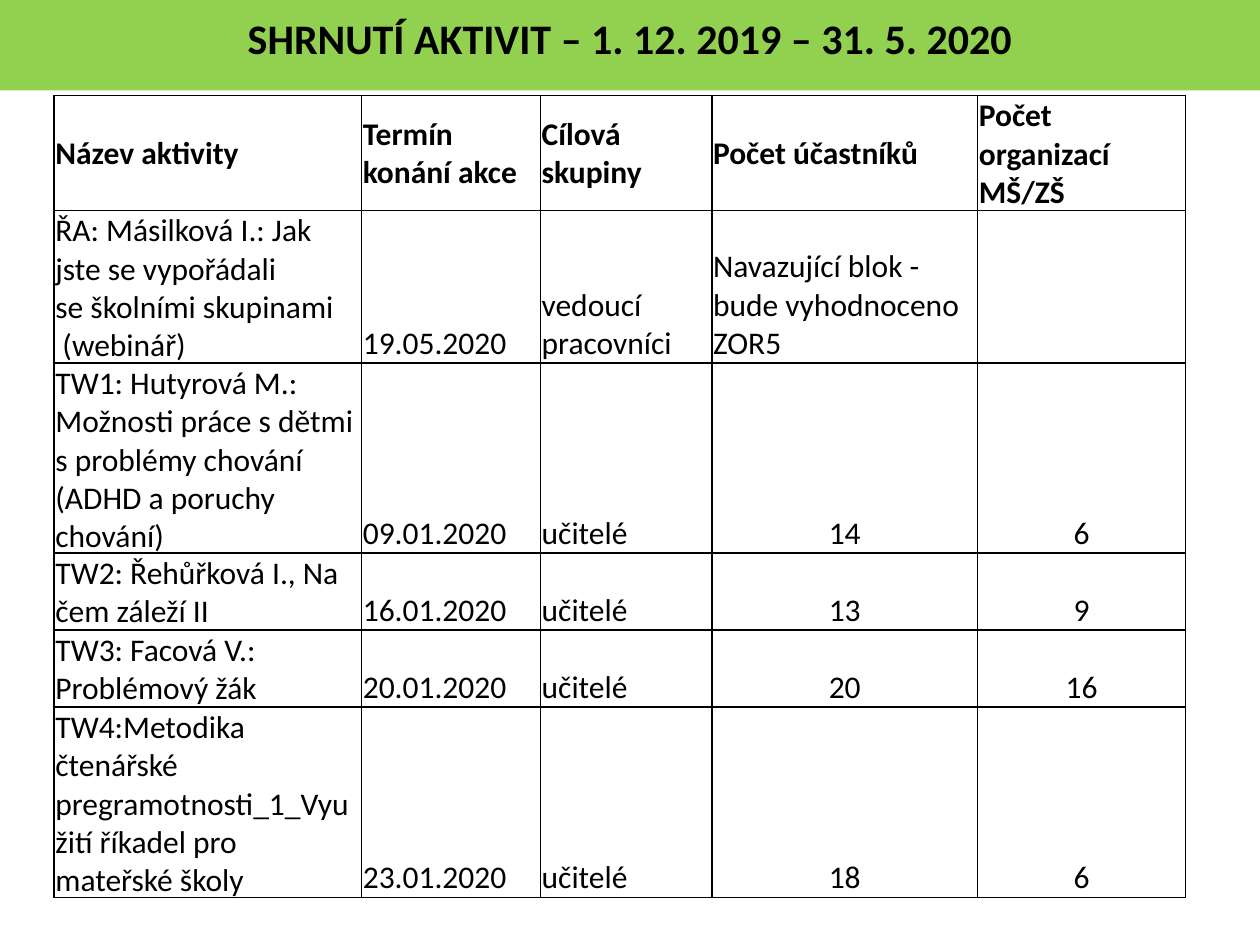
from dataclasses import dataclass

from lxml import etree
from pptx import Presentation
from pptx import util as u
from pptx.dml.color import RGBColor
from pptx.enum import text as t
from pptx.oxml import ns

BLACK = RGBColor(0x00, 0x00, 0x00)
WHITE = RGBColor(0xFF, 0xFF, 0xFF)
GREEN = RGBColor(0x92, 0xD0, 0x50)
FONT = "Calibri"
WIDTH, HEIGHT = u.Inches(10), u.Inches(7.5)
TABLE_LEFT, TABLE_TOP = u.Inches(0.43), u.Inches(0.76)
LINE_HEIGHT = u.Inches(6.34) / 21
COLUMN_SHARES = (0.244, 0.142, 0.136, 0.211, 0.165)
HEADINGS = (
    "Název aktivity",
    "Termín konání akce",
    "Cílová skupiny",
    "Počet účastníků",
    "Počet organizací MŠ/ZŠ",
)


@dataclass(frozen=True)
class Activity:
    name: str
    date: str
    participants: str
    organizations: str
    lines: int
    audience: str = "učitelé"

    def values(self) -> tuple[str, ...]:
        return (self.name, self.date, self.audience, self.participants, self.organizations)


ACTIVITIES = (
    Activity("ŘA: Másilková I.: Jak jste se vypořádali\vse školními skupinami\v (webinář)",
             "19.05.2020", "Navazující blok - bude vyhodnoceno ZOR5", "", 4, "vedoucí pracovníci"),
    Activity("TW1: Hutyrová M.: Možnosti práce s dětmi s problémy chování (ADHD a poruchy chování)",
             "09.01.2020", "14", "6", 5),
    Activity("TW2: Řehůřková I., Na čem záleží II", "16.01.2020", "13", "9", 2),
    Activity("TW3: Facová V.: Problémový žák", "20.01.2020", "20", "16", 2),
    Activity("TW4:Metodika čtenářské pregramotnosti_1_Využití říkadel pro mateřské školy",
             "23.01.2020", "18", "6", 5),
)


def write(frame, content: str, *, size: int = 18, bold: bool = False,
          align=t.PP_ALIGN.LEFT) -> None:
    para = frame.paragraphs[0]
    para.text = content
    para.alignment = align
    for span in para.runs:
        span.font.name = FONT
        span.font.size = u.Pt(size)
        span.font.bold = bold
        span.font.color.rgb = BLACK


def add_borders(cell) -> None:
    properties = cell._tc.get_or_add_tcPr()
    for index, side in enumerate(("lnL", "lnR", "lnT", "lnB")):
        line = etree.Element(ns.qn(f"a:{side}"), w=str(u.Pt(1)))
        fill = etree.SubElement(line, ns.qn("a:solidFill"))
        etree.SubElement(fill, ns.qn("a:srgbClr"), val=str(BLACK))
        properties.insert(index, line)


def draw_cell(cell, content: str, *, heading: bool) -> None:
    cell.margin_left = cell.margin_right = cell.margin_top = u.Inches(0.01)
    cell.margin_bottom = 0
    cell.vertical_anchor = t.MSO_ANCHOR.MIDDLE if heading else t.MSO_ANCHOR.BOTTOM
    cell.fill.solid()
    cell.fill.fore_color.rgb = WHITE
    add_borders(cell)
    align = t.PP_ALIGN.CENTER if content.isdigit() else t.PP_ALIGN.LEFT
    write(cell.text_frame, content, bold=heading, align=align)


def draw_table(page) -> None:
    rows = (HEADINGS, *(activity.values() for activity in ACTIVITIES))
    line_counts = (3, *(activity.lines for activity in ACTIVITIES))
    table = page.shapes.add_table(
        len(rows), len(HEADINGS), TABLE_LEFT, TABLE_TOP,
        int(WIDTH * sum(COLUMN_SHARES)), int(LINE_HEIGHT * sum(line_counts))).table
    table.first_row = table.horz_banding = False
    for column, share in zip(table.columns, COLUMN_SHARES):
        column.width = int(WIDTH * share)
    for index, (values, lines) in enumerate(zip(rows, line_counts)):
        table.rows[index].height = int(LINE_HEIGHT * lines)
        for cell, content in zip(table.rows[index].cells, values):
            draw_cell(cell, content, heading=index == 0)


def draw_title(page) -> None:
    box = page.shapes.title
    box.left, box.top = 0, u.Inches(0.05)
    box.width, box.height = WIDTH, u.Inches(0.5)
    box.fill.solid()
    box.fill.fore_color.rgb = GREEN
    box.text_frame.word_wrap = True
    box.text_frame.auto_size = t.MSO_AUTO_SIZE.SHAPE_TO_FIT_TEXT
    box.text_frame.vertical_anchor = t.MSO_ANCHOR.MIDDLE
    write(box.text_frame, "SHRNUTÍ AKTIVIT – 1. 12. 2019 – 31. 5. 2020",
          size=24, bold=True, align=t.PP_ALIGN.CENTER)


def main() -> None:
    deck = Presentation()
    deck.slide_width, deck.slide_height = WIDTH, HEIGHT
    page = deck.slides.add_slide(deck.slide_layouts.get_by_name("Title Only"))
    draw_table(page)
    draw_title(page)
    deck.save("out.pptx")


if __name__ == "__main__":
    main()
